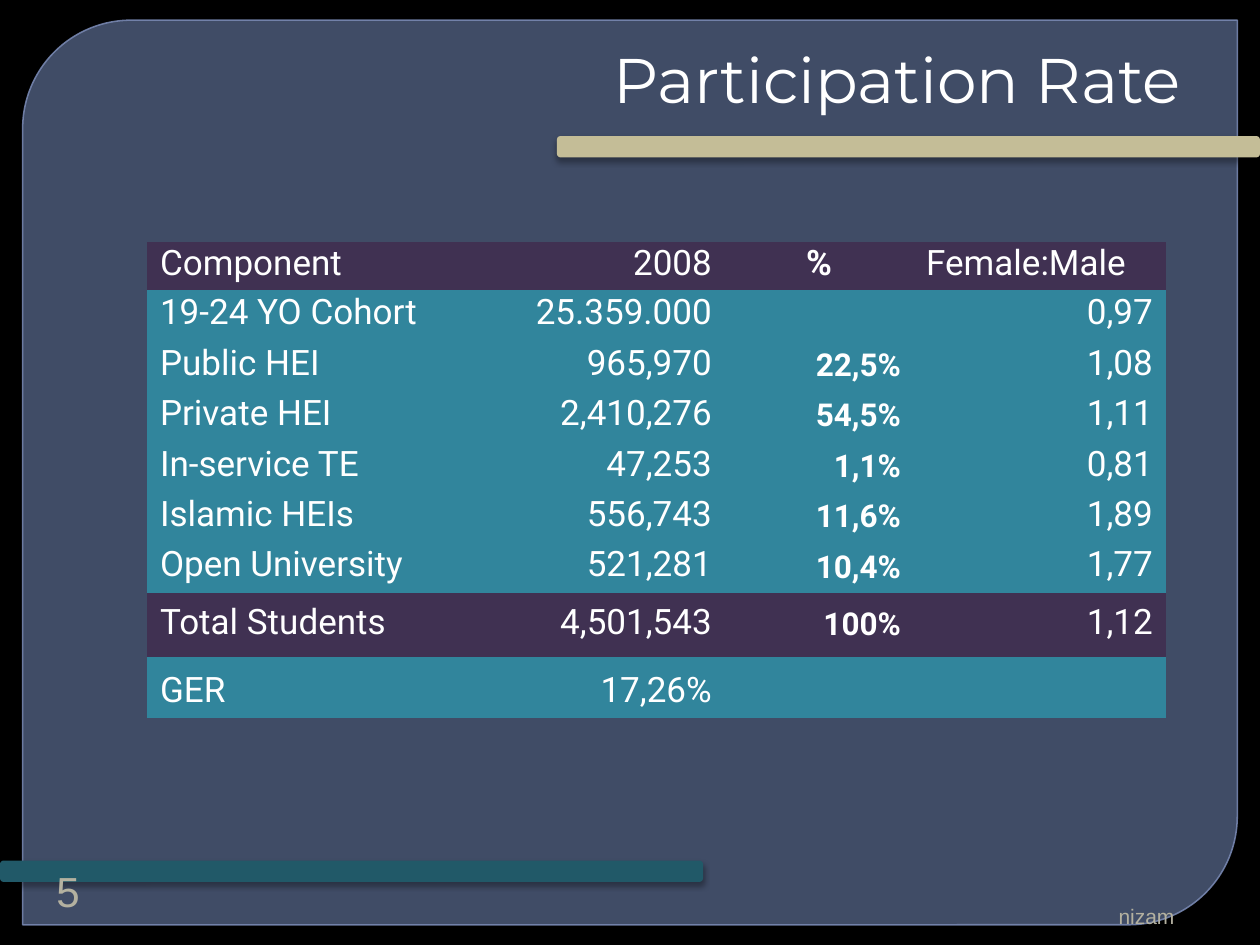
from dataclasses import dataclass
from lxml.etree import SubElement
from pptx import Presentation
from pptx.dml.color import RGBColor
from pptx.enum.shapes import MSO_SHAPE
from pptx.enum.text import MSO_ANCHOR, PP_ALIGN
from pptx.oxml import parse_xml
from pptx.oxml.ns import nsdecls, qn
from pptx.util import Inches, Pt


@dataclass(frozen=True)
class Theme:
    back: str = "000000"
    panel: str = "63759D"
    edge: str = "7989B3"
    sand: str = "C4BD97"
    teal: str = "215968"
    plum: str = "403152"
    sea: str = "31859C"
    ink: str = "FFFFFF"
    muted: str = "B4B1A0"
    head: str = "Montserrat"
    body: str = "Roboto"
    foot: str = "Arial"
    title: int = 36
    page: int = 24
    cell: int = 20
    share: int = 18
    note: int = 12


T = Theme()
LEFT, MID, RIGHT = PP_ALIGN.LEFT, PP_ALIGN.CENTER, PP_ALIGN.RIGHT
COLS = (2.58, 2, 1.5, 2)
ROWS = (0.38, *[0.39] * 6, 0.51, 0.48)
DATA = (
    ("Component", "2008", "%", "Female:Male"),
    ("19-24 YO Cohort", "25.359.000", "", "0,97"),
    ("Public HEI", "965,970", "22,5%", "1,08"),
    ("Private HEI", "2,410,276", "54,5%", "1,11"),
    ("In-service TE", "47,253", "1,1%", "0,81"),
    ("Islamic HEIs", "556,743", "11,6%", "1,89"),
    ("Open University", "521,281", "10,4%", "1,77"),
    ("Total Students", "4,501,543", "100%", "1,12"),
    ("GER", "17,26%", "", ""),
)
TOTAL, GER = 7, 8


def assign(item, values):
    for name, value in values.items():
        setattr(item, name, value)


def rgb(code):
    return RGBColor.from_string(code)


def paint(fill, code):
    fill.solid()
    fill.fore_color.rgb = rgb(code)


def fade(item, share):
    """Make the solid colour inside an XML element partly opaque."""
    color = next(item.iter(qn("a:srgbClr")))
    SubElement(color, qn("a:alpha"), val=str(share * 1000))


def write(frame, text, font, size, color, align, bold=False, gap=None):
    para = frame.paragraphs[0]
    assign(para, {"alignment": align, "line_spacing": gap})
    run = para.add_run()
    run.text = text
    assign(run.font, {"name": font, "size": Pt(size), "bold": bold})
    run.font.color.rgb = rgb(color)


def add_label(slide, box, anchor, *style):
    frame = slide.shapes.add_textbox(*map(Inches, box)).text_frame
    assign(frame, {"word_wrap": True, "vertical_anchor": anchor})
    write(frame, *style)


def add_panel(slide, box):
    panel = slide.shapes.add_shape(MSO_SHAPE.ROUND_2_DIAG_RECTANGLE, *map(Inches, box))
    panel.shadow.inherit = False
    panel.adjustments[0] = 0.12
    paint(panel.fill, T.panel)
    fade(panel.fill._xPr.find(qn("a:solidFill")), 65)
    panel.line.width = Pt(0.87)
    paint(panel.line.fill, T.edge)
    fade(panel.line._ln, 88)


def add_bar(slide, box, color):
    """Draw a rounded bar with a soft shadow below it."""
    bar = slide.shapes.add_shape(MSO_SHAPE.ROUNDED_RECTANGLE, *map(Inches, box))
    paint(bar.fill, color)
    bar.line.fill.background()
    bar.shadow.inherit = False
    glow = SubElement(
        bar._element.spPr.find(qn("a:effectLst")), qn("a:outerShdw"),
        blurRad=str(Pt(3.5)), dist=str(Pt(2.2)), dir="5400000", rotWithShape="0")
    SubElement(glow, qn("a:srgbClr"), val="000000")
    fade(glow, 32)


def edge_cell(cell):
    """Give a cell hairline borders, which precede its fill in the XML."""
    props = cell._tc.get_or_add_tcPr()
    for spot, side in enumerate("LRTB"):
        props.insert(spot, parse_xml(
            f'<a:ln{side} {nsdecls("a")} w="381"><a:solidFill>'
            f'<a:srgbClr val="{T.ink}"/></a:solidFill></a:ln{side}>'))


def fill_cell(cell, row, col, text):
    paint(cell.fill, T.plum if row in (0, TOTAL) else T.sea)
    edge_cell(cell)
    share = col == 2 and row > 0
    roomy = share or row == GER
    assign(cell, {
        "vertical_anchor": MSO_ANCHOR.MIDDLE,
        "margin_left": Inches(0.1), "margin_right": Inches(0.1),
        "margin_top": Inches(0.05 if roomy else 0.02),
        "margin_bottom": Inches(0.05),
    })
    if not text:
        return
    align = (LEFT, RIGHT, MID, LEFT)[col] if row == 0 else (RIGHT if col else LEFT)
    gap = 1.15 if row == GER else None if share else 0.93
    write(cell.text_frame, text, T.body, T.share if share else T.cell,
          T.ink, align, col == 2, gap)


def add_rates(slide, left, top):
    size = map(Inches, (left, top, sum(COLS), sum(ROWS)))
    table = slide.shapes.add_table(len(ROWS), len(COLS), *size).table
    assign(table, {"first_row": False, "horz_banding": False})
    for col, width in zip(table.columns, COLS):
        col.width = Inches(width)
    for row, height in zip(table.rows, ROWS):
        row.height = Inches(height)
    for row, line in enumerate(DATA):
        for col, text in enumerate(line):
            fill_cell(table.cell(row, col), row, col, text)


def add_frame(slide, width, height):
    """Draw the panel and the two bars that run off its sides."""
    paint(slide.background.fill, T.back)
    add_panel(slide, (0.18, 0.16, width - 0.36, height - 0.32))
    long, thick = 5.58, 0.17
    add_bar(slide, (width - long, 1.08, long, thick), T.sand)
    add_bar(slide, (0, height - 0.67, long, thick), T.teal)


def add_text(slide):
    add_label(slide, (0.98, -0.01, 8.49, 1.26), MSO_ANCHOR.MIDDLE,
              "Participation Rate", T.head, T.title, T.ink, RIGHT)
    add_label(slide, (0.23, 6.8, 0.62, 0.52), MSO_ANCHOR.BOTTOM,
              "5", T.foot, T.page, T.muted, MID)
    add_label(slide, (6.25, 6.9, 3.17, 0.52), MSO_ANCHOR.BOTTOM,
              "nizam", T.foot, T.note, T.muted, RIGHT)


def main():
    deck = Presentation()
    width, height = 10, 7.5
    assign(deck, {"slide_width": Inches(width), "slide_height": Inches(height)})
    slide = deck.slides.add_slide(deck.slide_layouts[6])
    add_frame(slide, width, height)
    add_text(slide)
    add_rates(slide, 1.17, 1.92)
    deck.save("out.pptx")


if __name__ == "__main__":
    main()
